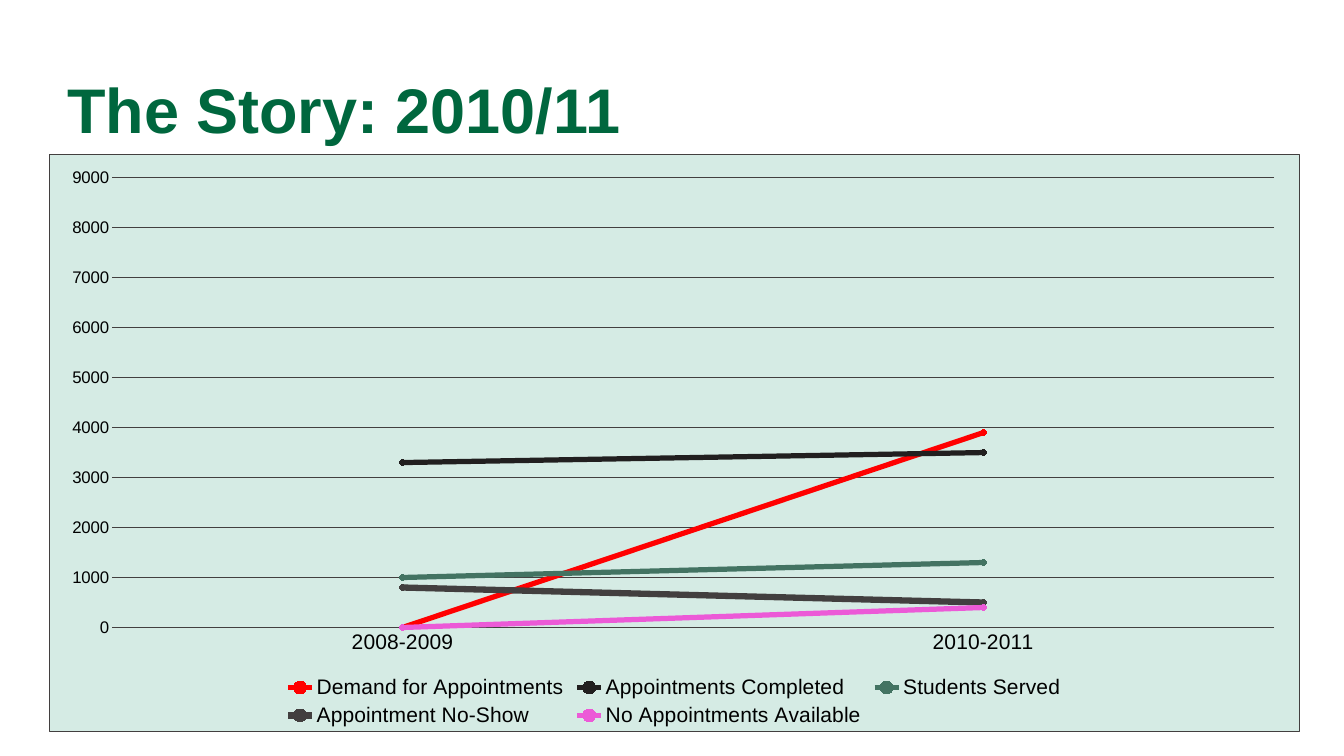
from lxml import etree
from pptx import Presentation
from pptx.chart.data import CategoryChartData
from pptx.dml.color import RGBColor
from pptx.enum.chart import XL_CHART_TYPE, XL_LEGEND_POSITION, XL_MARKER_STYLE, XL_TICK_MARK
from pptx.enum.text import MSO_ANCHOR
from pptx.oxml import parse_xml
from pptx.util import Inches, Pt

LINE_MARKERS = XL_CHART_TYPE.LINE_MARKERS
BOTTOM = XL_LEGEND_POSITION.BOTTOM
CIRCLE = XL_MARKER_STYLE.CIRCLE
NO_TICK = XL_TICK_MARK.NONE
MIDDLE = MSO_ANCHOR.MIDDLE
CHART_NS = "http://schemas.openxmlformats.org/drawingml/2006/chart"
DRAWING_NS = "http://schemas.openxmlformats.org/drawingml/2006/main"
C = "{" + CHART_NS + "}"
GREEN, MINT, GRAY, BLACK = "00673E", "D5EBE4", "423F3F", "000000"


def color(value):
    return RGBColor.from_string(value)


def set_font(font, size, value, bold=False):
    for name, setting in {"name": "Arial", "size": Pt(size), "bold": bold}.items():
        setattr(font, name, setting)
    font.color.rgb = color(value)


presentation = Presentation()
presentation.slide_width = Inches(17.78)
presentation.slide_height = Inches(10)
width, height = presentation.slide_width, presentation.slide_height
slide = presentation.slides.add_slide(presentation.slide_layouts[6])

title = slide.shapes.add_textbox(int(width * 0.05), Inches(0.73), int(width * 0.9), int(height * 0.16))
frame = title.text_frame
frame_format = {"word_wrap": True, "vertical_anchor": MIDDLE, "margin_left": 0,
                "margin_right": 0, "margin_top": 0, "margin_bottom": 0}
for name, setting in frame_format.items():
    setattr(frame, name, setting)
paragraph = frame.paragraphs[0]
paragraph.line_spacing = 0.8
run = paragraph.add_run()
run.text = "The Story: 2010/11"
set_font(run.font, 60, GREEN, True)

series_rows = [
    ("Demand for Appointments", (None, 3900), "FF0000", 5),
    ("Appointments Completed", (3300, 3500), "211F1F", 5),
    ("Students Served", (1000, 1300), "437362", 5),
    ("Appointment No-Show", (800, 500), GRAY, 6),
    ("No Appointments Available", (None, 400), "EC5AD7", 5),
]
data = CategoryChartData()
data.categories = ["2008-2009", "2010-2011"]
for name, values, _, _ in series_rows:
    data.add_series(name, values)
chart = slide.shapes.add_chart(
    LINE_MARKERS, Inches(0.65), Inches(2.04), Inches(16.54), Inches(7.64), data).chart
set_font(chart.font, 10, GRAY)
chart.has_title = False
chart.has_legend = True
chart.legend.position = BOTTOM
chart.legend.include_in_layout = False
set_font(chart.legend.font, 20, BLACK)

plot = chart.plots[0]
plot.vary_by_categories = False
for series, (_, _, value, weight) in zip(plot.series, series_rows):
    series.smooth = False
    series.format.line.color.rgb = color(value)
    series.format.line.width = Pt(weight)
    series.marker.style = CIRCLE
    series.marker.size = 5
    series.marker.format.fill.solid()
    series.marker.format.fill.fore_color.rgb = color(value)
    series.marker.format.line.color.rgb = color(value)

for axis, size in ((chart.category_axis, 20), (chart.value_axis, 16)):
    axis.major_tick_mark = NO_TICK
    axis.minor_tick_mark = NO_TICK
    set_font(axis.tick_labels.font, size, BLACK)
value_axis = chart.value_axis
axis_format = {"minimum_scale": 0, "maximum_scale": 9000, "major_unit": 1000,
               "has_major_gridlines": True}
for name, setting in axis_format.items():
    setattr(value_axis, name, setting)
value_axis.format.line.fill.background()
for line in (chart.category_axis.format.line, value_axis.major_gridlines.format.line):
    line.color.rgb = color(GRAY)
    line.width = Pt(0.75)

chart_space = chart.element
chart_part = chart_space.find(C + "chart")
chart_part.find(C + "dispBlanksAs").set("val", "zero")
chart_part.addnext(parse_xml(
    f'<c:spPr xmlns:c="{CHART_NS}" xmlns:a="{DRAWING_NS}">'
    f'<a:solidFill><a:srgbClr val="{MINT}"/></a:solidFill>'
    f'<a:ln w="{Pt(0.75)}"><a:solidFill><a:srgbClr val="{GRAY}"/></a:solidFill></a:ln></c:spPr>'))

plot_area = chart_part.find(C + "plotArea")
for layout in plot_area.findall(C + "layout"):
    plot_area.remove(layout)
layout = etree.Element(C + "layout")
manual = etree.SubElement(layout, C + "manualLayout")
placement = {"layoutTarget": "inner", "xMode": "edge", "yMode": "edge",
             "x": "0.05", "y": "0.04", "w": "0.93", "h": "0.78"}
for name, setting in placement.items():
    etree.SubElement(manual, C + name).set("val", setting)
plot_area.insert(0, layout)

presentation.save("out.pptx")
